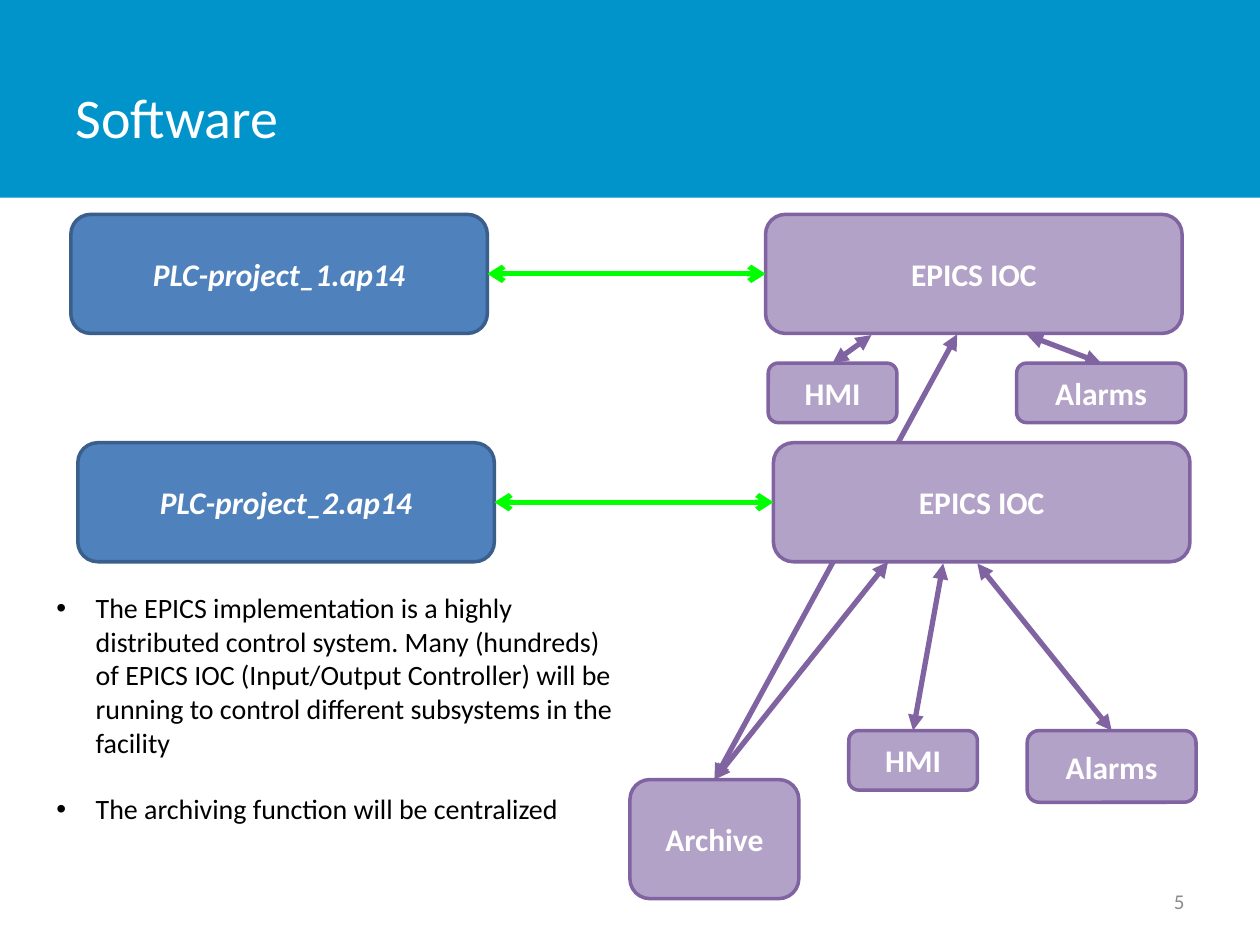
from dataclasses import dataclass

import pptx
import pptx.dml.color
import pptx.enum.shapes
import pptx.enum.text
import pptx.oxml
import pptx.oxml.ns
import pptx.util

Pt = pptx.util.Pt
MIDDLE = pptx.enum.text.MSO_ANCHOR.MIDDLE
ALIGN = pptx.enum.text.PP_ALIGN
TOP, LEFT, RIGHT = 0, 1, 3  # connection sites


def rgb(value):
    return pptx.dml.color.RGBColor.from_string(value)


@dataclass(frozen=True)
class Theme:
    font = "Calibri"
    banner = rgb("0094CA")
    plc = (rgb("4F81BD"), rgb("3A5F8C"))
    epics = (rgb("B3A2C7"), rgb("8064A2"))
    network = rgb("00FF00")
    light = rgb("FFFFFF")
    dark = rgb("000000")
    muted = rgb("8C8C8C")
    title_size = Pt(32)
    box_size = Pt(18)
    body_size = Pt(16)
    number_size = Pt(12)


theme = Theme()


def add_run(paragraph, text, size, color):
    run = paragraph.add_run()
    run.text = text
    run.font.name = theme.font
    run.font.size = size
    run.font.color.rgb = color
    return run


def place(shape, left, top, width, height):
    shape.left, shape.top = Pt(left), Pt(top)
    shape.width, shape.height = Pt(width), Pt(height)


presentation = pptx.Presentation()
presentation.slide_width, presentation.slide_height = Pt(720), Pt(540)
slide = presentation.slides.add_slide(presentation.slide_layouts[1])
shapes = slide.shapes

# Banner, behind the title
banner = shapes.add_shape(pptx.enum.shapes.MSO_SHAPE.RECTANGLE, 0, 0, Pt(720), Pt(113))
banner.shadow.inherit = False
banner.fill.solid()
banner.fill.fore_color.rgb = theme.banner
banner.line.fill.background()
shapes.element.insert(2, banner.element)

title = shapes.title
place(title, 36, 21.5, 562.5, 90)
title.text_frame.vertical_anchor = MIDDLE
heading = title.text_frame.paragraphs[0]
heading.alignment = ALIGN.LEFT
add_run(heading, "Software", theme.title_size, theme.light)

# Bullets
notes = slide.placeholders[1]
place(notes, 25, 334, 335, 143.5)
notes.text_frame.auto_size = pptx.enum.text.MSO_AUTO_SIZE.NONE
bullets = (
    "The EPICS implementation is a highly distributed control system. Many (hundreds) "
    "of EPICS IOC (Input/Output Controller) will be running to control different "
    "subsystems in the facility",
    "The archiving function will be centralized",
)
for index, bullet in enumerate(bullets):
    item = notes.text_frame.add_paragraph() if index else notes.text_frame.paragraphs[0]
    properties = item._p.get_or_add_pPr()
    properties.set("marL", str(Pt(22.5)))
    properties.set("indent", str(-Pt(22.5)))
    item.space_before = Pt(19 * index)
    add_run(item, bullet, theme.body_size, theme.dark)

# Boxes: key, label, colours, left, top, width, height
box_specs = (
    ("plc 1", "PLC-project_1.ap14", theme.plc, 40.5, 122.5, 238, 68),
    ("ioc 1", "EPICS IOC", theme.epics, 437.5, 122.5, 238, 68),
    ("hmi 1", "HMI", theme.epics, 439, 207.5, 73.5, 34),
    ("alarms 1", "Alarms", theme.epics, 581, 207.5, 96.5, 34),
    ("plc 2", "PLC-project_2.ap14", theme.plc, 44.5, 253, 238, 68),
    ("ioc 2", "EPICS IOC", theme.epics, 442, 253, 238, 68),
    ("hmi 2", "HMI", theme.epics, 485, 417.5, 73.5, 34),
    ("alarms 2", "Alarms", theme.epics, 587, 417.5, 96.5, 41),
    ("archive", "Archive", theme.epics, 360, 445.5, 96.5, 68),
)
boxes = {}
for key, label, (fill, outline), *frame in box_specs:
    box = shapes.add_shape(
        pptx.enum.shapes.MSO_SHAPE.ROUNDED_RECTANGLE, *map(Pt, frame))
    box.shadow.inherit = False
    box.fill.solid()
    box.fill.fore_color.rgb = fill
    box.line.color.rgb = outline
    box.line.width = Pt(2)
    box.text_frame.vertical_anchor = MIDDLE
    caption = box.text_frame.paragraphs[0]
    caption.alignment = ALIGN.CENTER
    run = add_run(caption, label, theme.box_size, theme.light)
    run.font.bold = True
    run.font.italic = True if key.startswith("plc") else None
    boxes[key] = box

# Two-way links: start box, start site, end box or end point, colour, arrowhead
purple = theme.epics[1]
links = (
    ("archive", TOP, (547, 191), purple, "triangle"),
    ("archive", TOP, (507.5, 321), purple, "triangle"),
    ("hmi 1", TOP, (498, 191.5), purple, "triangle"),
    ("alarms 1", TOP, (587, 191.5), purple, "triangle"),
    ("hmi 2", TOP, (539, 322), purple, "triangle"),
    ("alarms 2", TOP, (558.5, 322), purple, "triangle"),
    ("ioc 1", LEFT, "plc 1", theme.network, "arrow"),
    ("ioc 2", LEFT, "plc 2", theme.network, "arrow"),
)
for index, (start, site, end, color, arrowhead) in enumerate(links):
    end_point = (0, 0) if end in boxes else end
    link = shapes.add_connector(
        pptx.enum.shapes.MSO_CONNECTOR.STRAIGHT, 0, 0, *map(Pt, end_point))
    link.begin_connect(boxes[start], site)
    if end in boxes:
        link.end_connect(boxes[end], RIGHT)
    link.line.color.rgb = color
    link.line.width = Pt(3)
    link_properties = link.element.spPr
    line = link_properties.find(pptx.oxml.ns.qn("a:ln"))
    for tag in ("headEnd", "tailEnd"):
        line.append(pptx.oxml.parse_xml(
            f'<a:{tag} {pptx.oxml.ns.nsdecls("a")} type="{arrowhead}"/>'))
    link_properties.append(pptx.oxml.parse_xml(
        f'<a:effectLst {pptx.oxml.ns.nsdecls("a")}/>'))
    if index == 0:  # the long archive link runs behind the second IOC
        shapes.element.insert(3, link.element)

page_number = shapes.add_textbox(Pt(516), Pt(500.5), Pt(168), Pt(29))
page_number.text_frame.word_wrap = True
page_number.text_frame.vertical_anchor = MIDDLE
number = page_number.text_frame.paragraphs[0]
number.alignment = ALIGN.RIGHT
add_run(number, "5", theme.number_size, theme.muted)

presentation.save("out.pptx")
